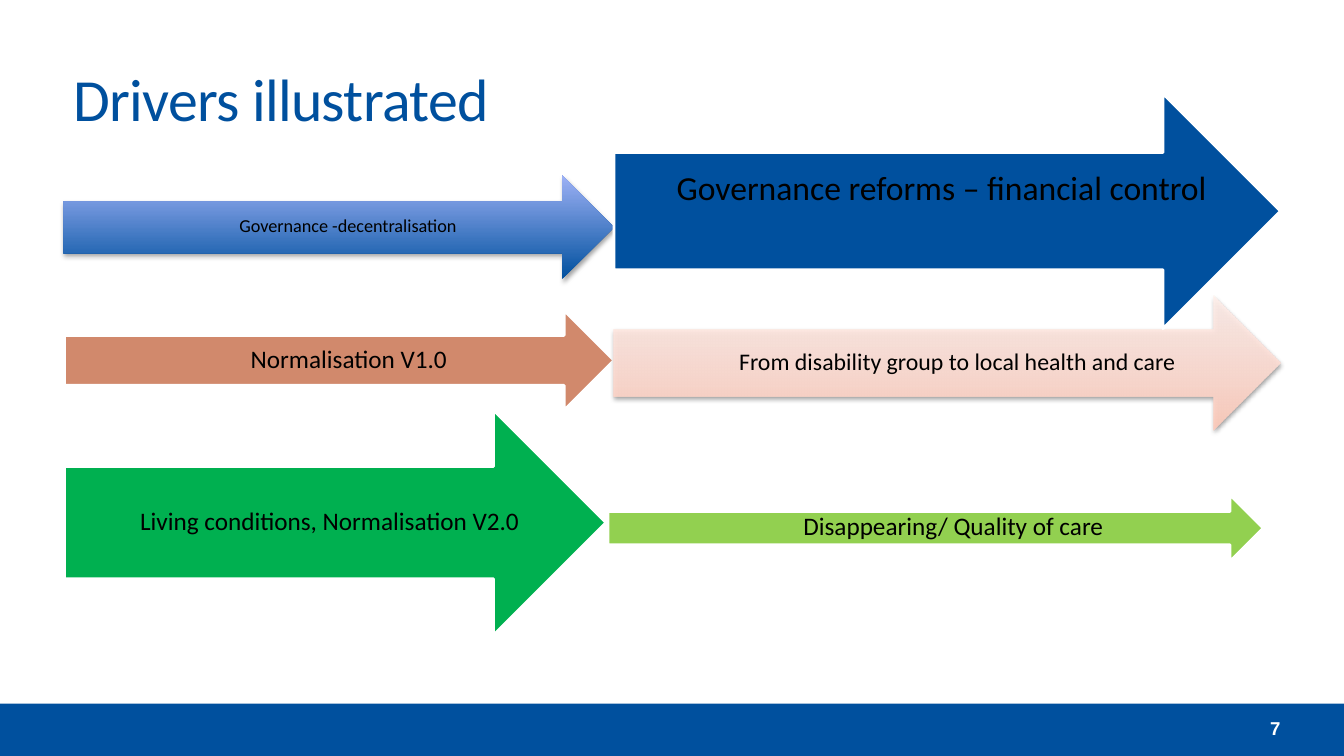
from pptx import Presentation
from pptx.dml.color import RGBColor
from pptx.enum.shapes import MSO_SHAPE
from pptx.enum.text import MSO_ANCHOR, PP_ALIGN
from pptx.oxml import parse_xml
from pptx.oxml.ns import nsdecls, qn
from pptx.util import Inches, Pt

ARROW, RECT = MSO_SHAPE.RIGHT_ARROW, MSO_SHAPE.RECTANGLE
MIDDLE = MSO_ANCHOR.MIDDLE
LEFT, CENTER, RIGHT = PP_ALIGN.LEFT, PP_ALIGN.CENTER, PP_ALIGN.RIGHT

BLUE = RGBColor(0x00, 0x50, 0x9E)
SKY = RGBColor(0x9D, 0xB1, 0xF5)
CLAY = RGBColor(0xD1, 0x89, 0x6C)
PEACH = RGBColor(0xFF, 0xCA, 0xB9)
ROSE = RGBColor(0xFF, 0xD9, 0xCE)
BLUSH = RGBColor(0xFF, 0xF0, 0xEC)
GREEN = RGBColor(0x00, 0xB0, 0x50)
LIME = RGBColor(0x92, 0xD0, 0x50)
WHITE = RGBColor(0xFF, 0xFF, 0xFF)
BLACK = RGBColor(0x00, 0x00, 0x00)

# A gradient is (stops from bottom to top, opacity %, shadow opacity %, shadow distance pt)
SEA = ([(0, BLUE), (100, SKY)], 100, 35, 1.8)
DAWN = ([(0, PEACH), (35, ROSE), (100, BLUSH)], 90, 38, 1.6)

# Arrow box, fill, label box, label inset, size, label
ARROWS = [
    ((0.63, 1.74, 5.46, 1.03), SEA, (1.07, 2, 4.76, 0.5),
     0.14, 13, "Governance -decentralisation"),
    ((0.64, 3.08, 5.45, 0.99), CLAY, (1.08, 3.33, 4.76, 0.49),
     0.2, 18, "Normalisation V1.0"),
    ((6.09, 2.93, 6.61, 1.34), DAWN, (6.63, 3.26, 5.73, 0.67),
     0.19, 17, "From disability group to local health and care"),
    ((0.64, 4.07, 5.37, 2.23), GREEN, (1.07, 4.34, 4.4, 1.69),
     0.2, 18, "Living conditions, Normalisation V2.0"),
    ((6.03, 4.91, 6.5, 0.66), LIME, (6.55, 5.07, 5.81, 0.33),
     0.2, 18, "Disappearing/ Quality of care"),
    ((6.09, 0.93, 6.61, 2.33), BLUE, (6.62, 1.41, 5.44, 0.94),
     0.27, 24, "Governance reforms – financial control"),
]


class Deck:
    """Holds the text style and the current slide."""

    font = {"name": "Calibri", "size": Pt(18), "bold": False}

    def __init__(self):
        self.prs = Presentation()
        self.prs.slide_width = Inches(13.33)
        self.prs.slide_height = Inches(7.5)
        self.slide = self.prs.slides.add_slide(self.prs.slide_layouts[5])

    def label(self, frame, text, color, align, **font):
        frame.word_wrap = True
        frame.vertical_anchor = MIDDLE
        para = frame.paragraphs[0]
        para.alignment = align
        run = para.add_run()
        run.text = text
        for key, value in {**self.font, **font}.items():
            setattr(run.font, key, value)
        run.font.color.rgb = color
        return run

    def title(self, text, box):
        shape = self.slide.shapes.title
        for key, value in zip(("left", "top", "width", "height"), box):
            setattr(shape, key, Inches(value))
        run = self.label(shape.text_frame, text, BLUE, LEFT, size=Pt(42.7))
        run.font._element.set("spc", "-50")

    def text(self, home, text, box, inset=0, color=BLACK, align=CENTER, **font):
        frame = home.add_textbox(*map(Inches, box)).text_frame
        frame.margin_left = frame.margin_right = 0
        frame.margin_top = frame.margin_bottom = Inches(inset)
        self.label(frame, text, color, align, **font)
        frame.paragraphs[0].line_spacing = 0.9

    def shape(self, home, kind, box, fill, edge=None):
        shape = home.add_shape(kind, *map(Inches, box))
        shape.shadow.inherit = False
        if edge is None:
            shape.line.fill.background()
        else:
            shape.line.color.rgb = edge
            shape.line.width = Pt(2)
        if isinstance(fill, RGBColor):
            shape.fill.solid()
            shape.fill.fore_color.rgb = fill
        else:
            self.blend(shape, *fill)

    def blend(self, shape, stops, alpha, shade, gap):
        """Fill with an upward gradient and cast a soft shadow below."""
        shape.fill.gradient()
        shape.fill.gradient_angle = 90
        props = shape._element.spPr
        marks = "".join(
            f'<a:gs pos="{pos * 1000}"><a:srgbClr val="{color}">'
            f'<a:alpha val="{alpha * 1000}"/></a:srgbClr></a:gs>'
            for pos, color in stops)
        old = props.find(qn("a:gradFill")).find(qn("a:gsLst"))
        old.getparent().replace(
            old, parse_xml(f'<a:gsLst {nsdecls("a")}>{marks}</a:gsLst>'))
        props.find(qn("a:effectLst")).append(parse_xml(
            f'<a:outerShdw {nsdecls("a")} blurRad="{Pt(3.1)}" dist="{Pt(gap)}" '
            f'dir="5400000" rotWithShape="0"><a:srgbClr val="{BLACK}">'
            f'<a:alpha val="{shade * 1000}"/></a:srgbClr></a:outerShdw>'))

    def arrow(self, box, fill, area, inset, size, label):
        home = self.slide.shapes.add_group_shape().shapes
        edge = WHITE if isinstance(fill, RGBColor) else None
        self.shape(home, ARROW, box, fill, edge)
        self.text(home, label, area, inset, size=Pt(size))


def main():
    deck = Deck()
    home = deck.slide.shapes
    deck.shape(home, RECT, (0, 6.98, 13.33, 0.52), BLUE)
    deck.text(home, "7", (11.75, 6.98, 0.95, 0.52), color=WHITE, align=RIGHT,
              name="Arial", size=Pt(13.3), bold=True)
    deck.title("Drivers illustrated", (0.63, 0.31, 12.07, 1.31))
    for item in ARROWS:
        deck.arrow(*item)
    deck.prs.save("out.pptx")


if __name__ == "__main__":
    main()
